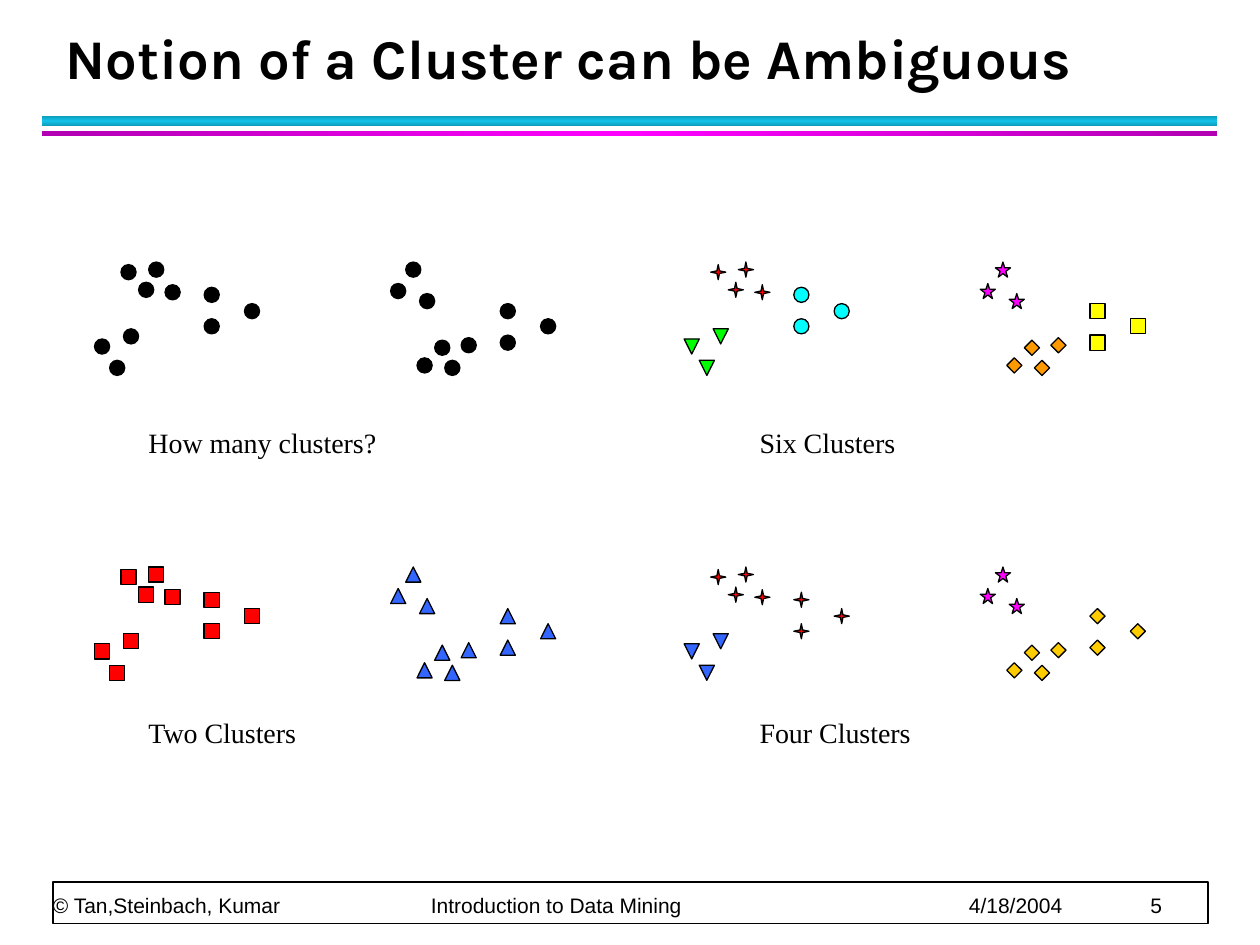
import copy
from dataclasses import dataclass

import pptx
import pptx.dml.color
import pptx.enum.shapes
import pptx.enum.text
import pptx.oxml
import pptx.oxml.ns
import pptx.util
from pptx.util import Inches

SHAPE = pptx.enum.shapes.MSO_SHAPE
ANCHOR = pptx.enum.text.MSO_ANCHOR


@dataclass(frozen=True)
class Theme:
    ink: str = "000000"
    paper: str = "FFFFFF"
    cyan_bar: tuple = ("0E9BBA", "12C2E9", "0E9BBA")
    magenta_bar: tuple = ("B200B2", "FF00FF", "B200B2")
    red: str = "FF0000"
    blue: str = "3366FF"
    green: str = "00FF00"
    cyan: str = "00FFFF"
    magenta: str = "FF00FF"
    orange: str = "FF9900"
    gold: str = "FFCC00"
    yellow: str = "FFFF00"
    title_font: str = "Karla"
    caption_font: str = "Times New Roman"
    footer_font: str = "Arial"
    title_size: int = 32
    caption_size: int = 16
    footer_size: int = 12
    marker_line: float = 0.75
    frame_line: float = 1


THEME = Theme()


@dataclass(frozen=True)
class Marker:
    shape: SHAPE
    color: str


@dataclass(frozen=True)
class Panel:
    """One drawing of the data: a marker for each of the three groups per cloud."""
    caption: str
    left: float
    top: float
    caption_left: float
    caption_top: float
    left_cloud: tuple
    right_cloud: tuple


# Groups of points in a cloud, measured from its top left corner
GROUPS = (
    ((0.56, 0.18), (0.21, 0.02), (0.43, 0), (0.35, 0.16)),
    ((0.23, 0.53), (0, 0.61), (0.12, 0.78)),
    ((0.87, 0.2), (1.19, 0.33), (0.87, 0.45)),
)
CLOUD_DEPTH = 0.78   # the right cloud mirrors the left one top to bottom
CLOUD_SHIFT = 2.35
MARKER_SIZE = 0.12

DOT = Marker(SHAPE.OVAL, THEME.ink)
RED_SQUARE = Marker(SHAPE.RECTANGLE, THEME.red)
BLUE_TRIANGLE = Marker(SHAPE.ISOSCELES_TRIANGLE, THEME.blue)
RED_STAR = Marker(SHAPE.STAR_4_POINT, THEME.red)
PINK_STAR = Marker(SHAPE.STAR_5_POINT, THEME.magenta)
GOLD_DIAMOND = Marker(SHAPE.DIAMOND, THEME.gold)

PANELS = (
    Panel("How many clusters?", 0.75, 2.08, 1.08, 3.33, (DOT,) * 3, (DOT,) * 3),
    Panel("Four Clusters", 5.43, 4.5, 5.93, 5.63,
          (RED_STAR, Marker(SHAPE.FLOWCHART_EXTRACT, THEME.blue), RED_STAR),
          (GOLD_DIAMOND, PINK_STAR, GOLD_DIAMOND)),
    Panel("Two Clusters", 0.75, 4.5, 1.08, 5.63, (RED_SQUARE,) * 3, (BLUE_TRIANGLE,) * 3),
    Panel("Six Clusters", 5.43, 2.08, 5.93, 3.33,
          (RED_STAR, Marker(SHAPE.ISOSCELES_TRIANGLE, THEME.green),
           Marker(SHAPE.OVAL, THEME.cyan)),
          (Marker(SHAPE.DIAMOND, THEME.orange), PINK_STAR,
           Marker(SHAPE.RECTANGLE, THEME.yellow))),
)


def rgb(color: str):
    return pptx.dml.color.RGBColor.from_string(color)


def add_filled(page, kind, left: float, top: float, width: float, height: float,
               color: str, line: float):
    shape = page.shapes.add_shape(kind, Inches(left), Inches(top), Inches(width), Inches(height))
    shape.shadow.inherit = False
    shape.fill.solid()
    shape.fill.fore_color.rgb = rgb(color)
    shape.line.color.rgb = rgb(THEME.ink)
    shape.line.width = pptx.util.Pt(line)
    return shape


def add_bar(page, top: float, height: float, colors: tuple, angle: int) -> None:
    bar = page.shapes.add_shape(SHAPE.RECTANGLE, Inches(0.33), Inches(top),
                                Inches(9.33), Inches(height))
    bar.shadow.inherit = False
    bar.line.fill.background()
    bar.fill.gradient()
    bar.fill.gradient_angle = angle
    stops = bar.element.spPr.find(".//" + pptx.oxml.ns.qn("a:gsLst"))
    stops.append(copy.deepcopy(stops[0]))
    for index, (stop, color) in enumerate(zip(bar.fill.gradient_stops, colors)):
        stop.position = index / 2
        stop.color.rgb = rgb(color)


def add_text(page, text: str, left: float, top: float, width: float, height: float,
             font: str, size: int, anchor=ANCHOR.TOP, bold: bool = False):
    box = page.shapes.add_textbox(Inches(left), Inches(top), Inches(width), Inches(height))
    frame = box.text_frame
    frame.word_wrap = True
    frame.vertical_anchor = anchor
    para = frame.paragraphs[0]
    para.text = text
    para.font.name = font
    para.font.size = pptx.util.Pt(size)
    para.font.bold = bold
    para.font.color.rgb = rgb(THEME.ink)
    return box


def add_footer(page) -> None:
    add_filled(page, SHAPE.RECTANGLE, 0.42, 7, 9.17, 0.33, THEME.paper, THEME.frame_line)
    entries = ("© Tan,Steinbach, Kumar", "Introduction to Data Mining", "4/18/2004", "5")
    box = add_text(page, "\t".join(entries), 0.42, 7, 9.15, 0.28,
                   THEME.footer_font, THEME.footer_size, ANCHOR.BOTTOM)
    frame = box.text_frame
    frame.margin_left = frame.margin_right = frame.margin_top = frame.margin_bottom = 0
    para = frame.paragraphs[0]
    para.line_spacing = pptx.util.Pt(20)
    # Tab stops set the columns of the footer
    stops = "".join(f'<a:tab pos="{Inches(place)}" algn="l"/>' for place in (3, 7.27, 8.71))
    tabs = pptx.oxml.parse_xml(f'<a:tabLst {pptx.oxml.ns.nsdecls("a")}>{stops}</a:tabLst>')
    para.font._element.getparent().find(pptx.oxml.ns.qn("a:defRPr")).addprevious(tabs)


def add_cloud(page, left: float, top: float, markers: tuple, mirrored: bool) -> None:
    for marker, points in zip(markers, GROUPS):
        for x, y in points:
            place = CLOUD_DEPTH - y if mirrored else y
            shape = add_filled(page, marker.shape, left + x, top + place,
                               MARKER_SIZE, MARKER_SIZE, marker.color, THEME.marker_line)
            if marker.shape == SHAPE.STAR_4_POINT:
                shape.adjustments[0] = 0.12
            if not mirrored:
                shape.element.spPr.xfrm.set("flipV", "1")


def add_panel(page, panel: Panel) -> None:
    add_cloud(page, panel.left + CLOUD_SHIFT, panel.top, panel.right_cloud, True)
    add_cloud(page, panel.left, panel.top, panel.left_cloud, False)
    add_text(page, panel.caption, panel.caption_left, panel.caption_top, 2.5, 0.37,
             THEME.caption_font, THEME.caption_size)


def main() -> None:
    deck = pptx.Presentation()
    deck.slide_width, deck.slide_height = Inches(10), Inches(7.5)
    page = deck.slides.add_slide(deck.slide_layouts[6])

    # Bars, footer and title
    add_bar(page, 0.92, 0.08, THEME.cyan_bar, 90)
    add_bar(page, 1.04, 0.04, THEME.magenta_bar, 0)
    add_footer(page)
    title = add_text(page, "Notion of a Cluster can be Ambiguous", 0.42, 0.17, 9.06, 0.6,
                     THEME.title_font, THEME.title_size, ANCHOR.BOTTOM, bold=True)
    title.text_frame.paragraphs[0].line_spacing = pptx.util.Pt(36)

    # Four readings of the same points
    for panel in PANELS:
        add_panel(page, panel)
    deck.save("out.pptx")


if __name__ == "__main__":
    main()
